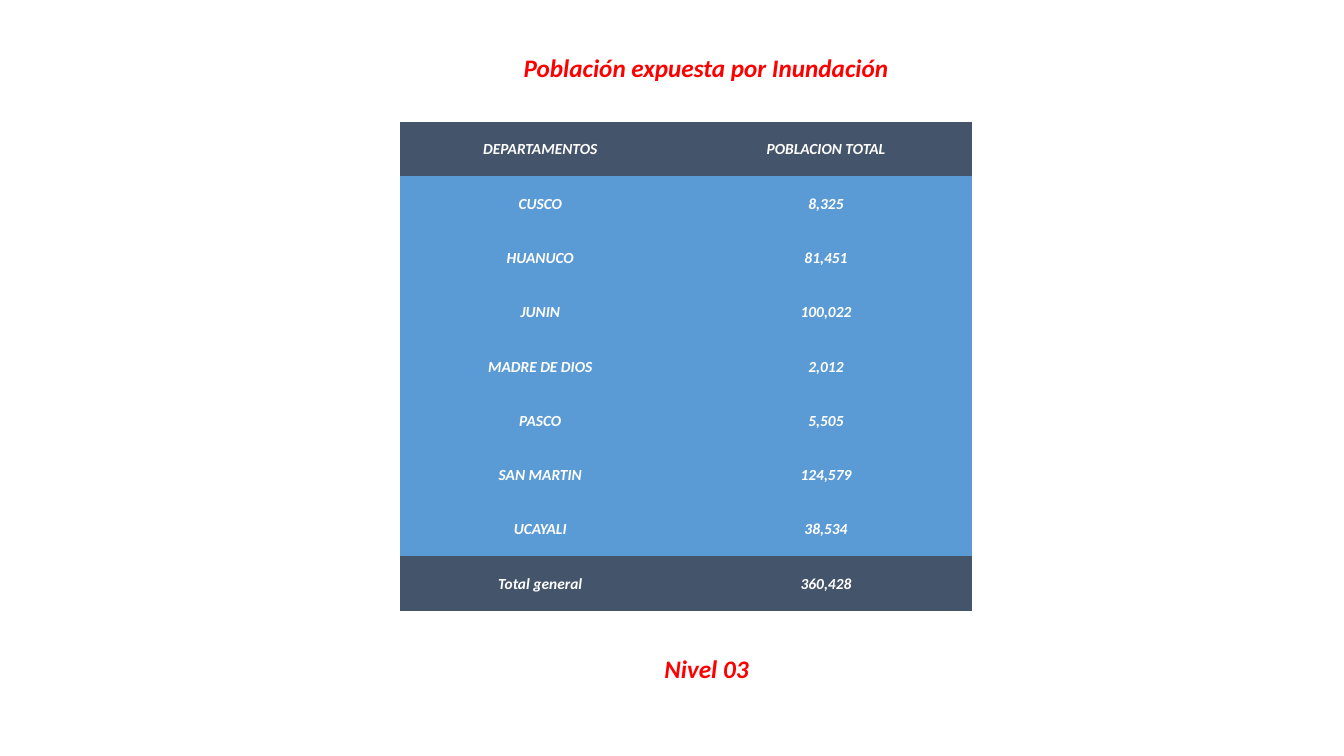
from dataclasses import dataclass

from pptx import Presentation
from pptx.dml.color import RGBColor
from pptx.enum.text import MSO_ANCHOR, MSO_AUTO_SIZE, PP_ALIGN
from pptx.oxml.ns import qn
from pptx.slide import Slide
from pptx.text.text import TextFrame
from pptx.util import Pt

RED = RGBColor(0xFF, 0x00, 0x00)
WHITE = RGBColor(0xFF, 0xFF, 0xFF)
SLATE = RGBColor(0x44, 0x54, 0x6A)
BLUE = RGBColor(0x5B, 0x9B, 0xD5)

FONT = "Calibri"
NO_STYLE_NO_GRID = "{2D5ABB26-0587-4C30-8999-92F81FD0307C}"
COL_WIDTHS = (200.16, 208.08)
ROW_HEIGHT = 38.8


@dataclass
class Row:
    department: str
    population: str
    fill: RGBColor = BLUE


ROWS = [
    Row("DEPARTAMENTOS", "POBLACION TOTAL", SLATE),
    Row("CUSCO", "8,325"),
    Row("HUANUCO", "81,451"),
    Row("JUNIN", "100,022"),
    Row("MADRE DE DIOS", "2,012"),
    Row("PASCO", "5,505"),
    Row("SAN MARTIN", "124,579"),
    Row("UCAYALI", "38,534"),
    Row("Total general", "360,428", SLATE),
]


def write(tf: TextFrame, text: str, *, size: float, color: RGBColor) -> None:
    """Write one centred, bold italic paragraph."""
    p = tf.paragraphs[0]
    p.alignment = PP_ALIGN.CENTER
    r = p.add_run()
    r.text = text
    r.font.name = FONT
    r.font.size = Pt(size)
    r.font.bold = r.font.italic = True
    r.font.color.rgb = color


def add_title(s: Slide) -> None:
    sp = s.shapes.title
    sp.left, sp.top, sp.width, sp.height = Pt(365.76), Pt(33.84), Pt(277.2), Pt(28.8)
    tf = sp.text_frame
    tf.word_wrap = False
    tf.auto_size = MSO_AUTO_SIZE.SHAPE_TO_FIT_TEXT
    tf.vertical_anchor = MSO_ANCHOR.TOP
    tf.paragraphs[0].line_spacing = 1.0
    tf.paragraphs[0].space_before = Pt(0)
    write(tf, "Población expuesta por Inundación", size=18, color=RED)


def add_level(s: Slide) -> None:
    sp = s.shapes.add_textbox(Pt(465.12), Pt(462.96), Pt(79.2), Pt(28.8))
    tf = sp.text_frame
    tf.word_wrap = True
    tf.auto_size = MSO_AUTO_SIZE.SHAPE_TO_FIT_TEXT
    write(tf, "Nivel 03", size=18, color=RED)


def add_population_table(s: Slide, rows: list[Row]) -> None:
    frame = s.shapes.add_table(
        len(rows), len(COL_WIDTHS), Pt(285.84), Pt(87.12),
        Pt(sum(COL_WIDTHS)), Pt(ROW_HEIGHT * len(rows)),
    )
    table = frame.table
    table.first_row = table.horz_banding = False
    table._tbl.tblPr.find(qn("a:tableStyleId")).text = NO_STYLE_NO_GRID
    for column, width in zip(table.columns, COL_WIDTHS):
        column.width = Pt(width)
    for i, row in enumerate(rows):
        table.rows[i].height = Pt(ROW_HEIGHT)
        for j, text in enumerate((row.department, row.population)):
            cell = table.cell(i, j)
            cell.fill.solid()
            cell.fill.fore_color.rgb = row.fill
            cell.vertical_anchor = MSO_ANCHOR.MIDDLE
            cell.margin_left = cell.margin_top = cell.margin_right = Pt(0.72)
            cell.margin_bottom = Pt(0)
            write(cell.text_frame, text, size=11, color=WHITE)


def main() -> None:
    prs = Presentation()
    prs.slide_width, prs.slide_height = Pt(960), Pt(540)
    s = prs.slides.add_slide(prs.slide_layouts.get_by_name("Title Only"))

    # Heading and level caption
    add_title(s)
    add_level(s)

    # Exposed population by department
    add_population_table(s, ROWS)

    prs.save("out.pptx")


if __name__ == "__main__":
    main()
